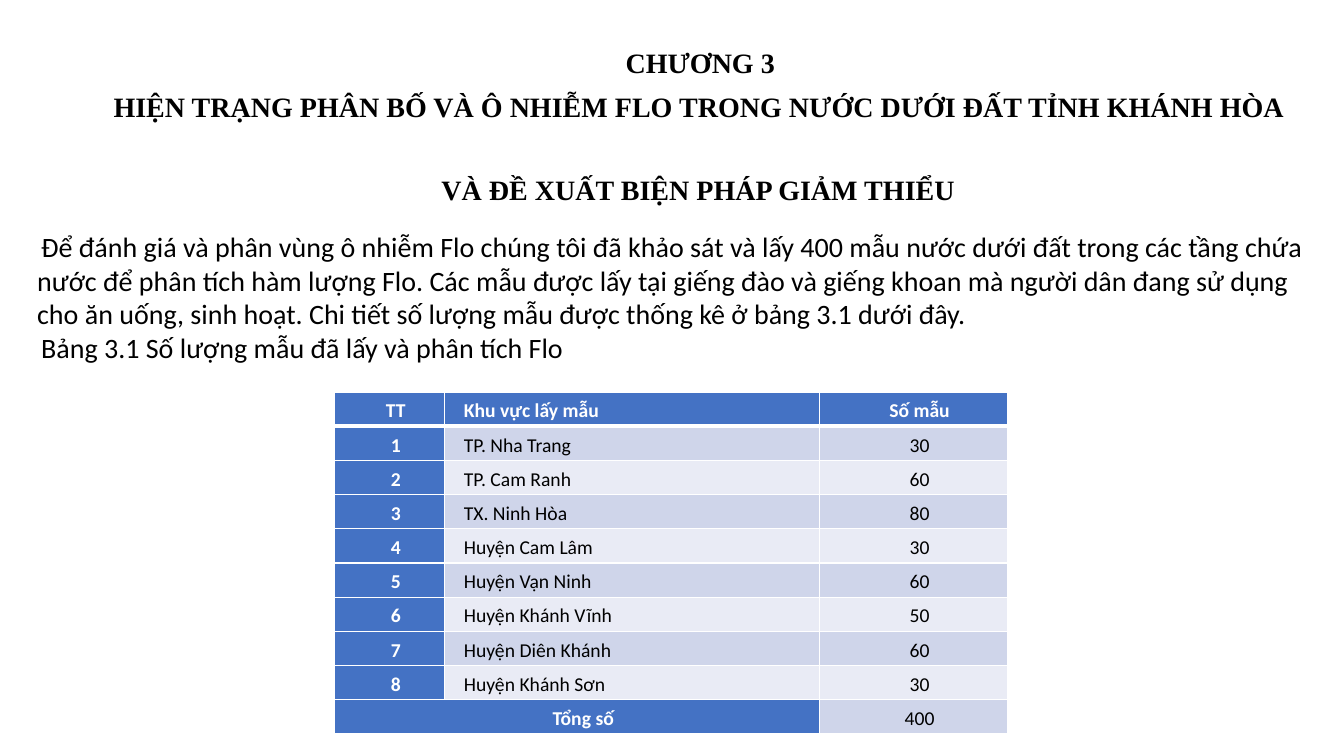
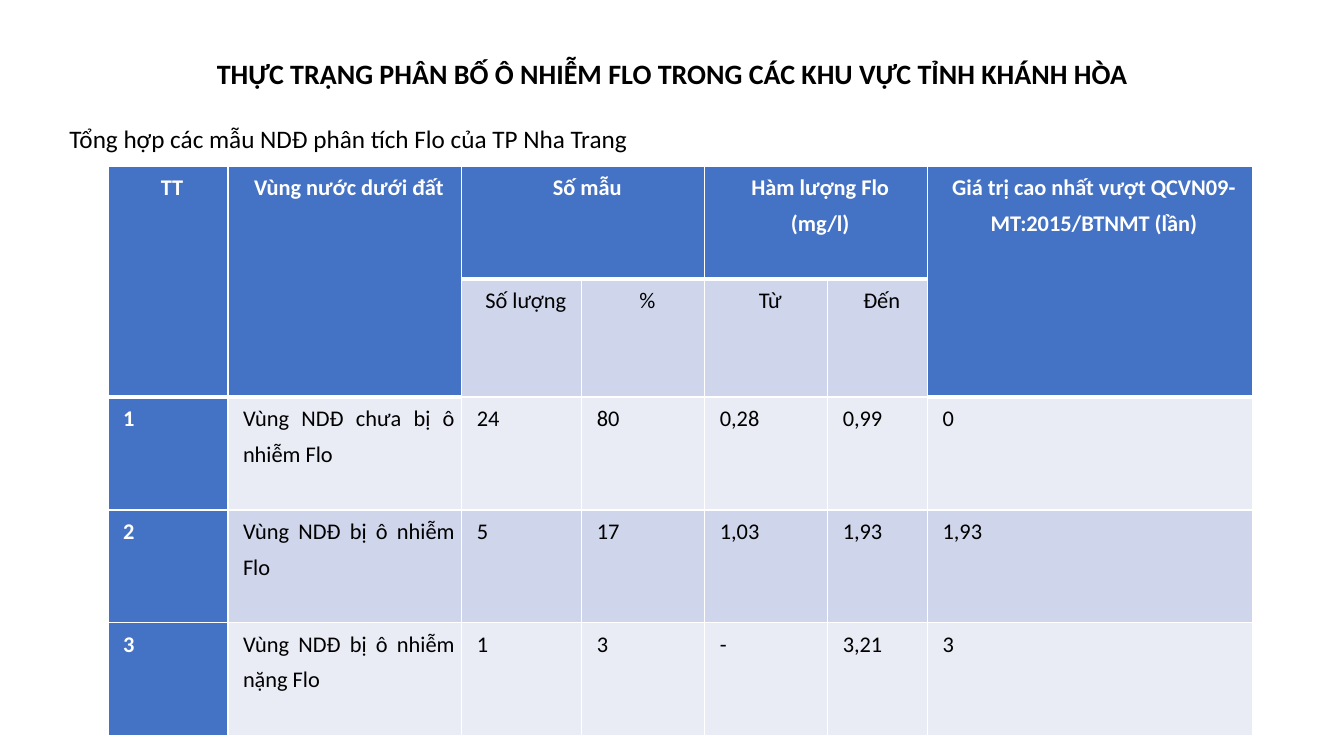
from lxml.etree import SubElement
from pptx import Presentation
from pptx.dml.color import RGBColor
from pptx.enum.text import MSO_ANCHOR, MSO_AUTO_SIZE, PP_ALIGN
from pptx.oxml.ns import qn
from pptx.util import Inches, Pt

# Shared look
WIDE, HIGH = Inches(13.33), Inches(7.5)
BLUE, DARK, PALE = "4472C4", "CFD5EA", "E9EBF5"
WHITE, BLACK = "FFFFFF", "000000"
FONT, SERIF = "Calibri", "Times New Roman"
MID, JUST = PP_ALIGN.CENTER, PP_ALIGN.JUSTIFY


def color(code):
    return RGBColor.from_string(code)


# Lengths are percentages of the slide's width or height
def across(share):
    return round(WIDE * share / 100)


def down(share):
    return round(HIGH * share / 100)


def indent(para, left, first):
    props = para._p.get_or_add_pPr()
    props.set("marL", str(Inches(left)))
    props.set("indent", str(Inches(first)))


def add_run(para, text, size, tint=BLACK, bold=False, face=FONT):
    run = para.add_run()
    run.text = text
    run.font.size, run.font.bold, run.font.name = Pt(size), bold, face
    run.font.color.rgb = color(tint)


def add_box(slide, left, top, width, height, anchor):
    box = slide.shapes.add_textbox(across(left), down(top), across(width), down(height))
    frame = box.text_frame
    frame.word_wrap = True
    frame.vertical_anchor = anchor
    return frame


def add_title(slide, lines, width, height, space, face=FONT):
    frame = add_box(slide, 6.9, 5.33, width, height, MSO_ANCHOR.MIDDLE)
    para = frame.paragraphs[0]
    para.alignment, para.line_spacing = MID, space
    for num, line in enumerate(lines):
        if num:
            para.add_line_break()
        add_run(para, line, 20, bold=True, face=face)
    return para


def add_body(slide, texts, place, size, anchor):
    frame = add_box(slide, *place, anchor)
    frame.auto_size = MSO_AUTO_SIZE.SHAPE_TO_FIT_TEXT
    for num, text in enumerate(texts):
        para = frame.add_paragraph() if num else frame.paragraphs[0]
        indent(para, 0, 0.04)
        add_run(para, text, size)


# Table cells
def add_edge(cell, side, width):
    line = SubElement(cell._tc.get_or_add_tcPr(), qn("a:ln" + side), w=str(Pt(width)))
    fill = SubElement(line, qn("a:solidFill"))
    SubElement(fill, qn("a:srgbClr"), val=WHITE)


def fill_cell(cell, text, size, align, first, row, col):
    head = row == 0 or col == 0
    cell.margin_left = cell.margin_right = Inches(0.07)
    cell.margin_top = cell.margin_bottom = 0
    for side in "LRTB":
        if side != "T" or row == 0:
            add_edge(cell, side, 3 if side == "B" and row == 0 else 1)
    cell.fill.solid()
    cell.fill.fore_color.rgb = color(BLUE if head else DARK if row % 2 else PALE)
    para = cell.text_frame.paragraphs[0]
    para.alignment, para.line_spacing, para.space_after = align, 1.3, Pt(6)
    indent(para, 0.08, first)
    add_run(para, text, size, WHITE if head else BLACK, head)


def add_grid(slide, data, left, top, cols, rows, spans, size, first, align):
    shape = slide.shapes.add_table(len(rows), len(cols), across(left), down(top),
                                   across(sum(cols)), down(sum(rows)))
    table = shape.table
    table.first_row = table.horz_banding = False
    for col, width in zip(table.columns, cols):
        col.width = across(width)
    for row, height in zip(table.rows, rows):
        row.height = down(height)
    for row, col, last, end in spans:
        table.cell(row, col).merge(table.cell(last, end))
    for row, texts in enumerate(data):
        for col, text in enumerate(texts):
            cell = table.cell(row, col)
            if not cell.is_spanned:
                fill_cell(cell, text, size, align(row, col), first, row, col)


# Slide 1: sample counts
def add_counts(slide):
    para = add_title(slide, [
        "CHƯƠNG 3",
        "HIỆN TRẠNG PHÂN BỐ VÀ Ô NHIỄM FLO TRONG NƯỚC DƯỚI ĐẤT TỈNH KHÁNH HÒA ",
        "VÀ ĐỀ XUẤT BIỆN PHÁP GIẢM THIỂU"], 89.5, 21.33, 1.3, SERIF)
    para.space_after = Pt(2)
    indent(para, 0.08, 0.04)
    areas = [("TP. Nha Trang", 30), ("TP. Cam Ranh", 60), ("TX. Ninh Hòa", 80),
             ("Huyện Cam Lâm", 30), ("Huyện Vạn Ninh", 60), ("Huyện Khánh Vĩnh", 50),
             ("Huyện Diên Khánh", 60), ("Huyện Khánh Sơn", 30)]
    total = sum(count for _, count in areas)
    data = [("TT", "Khu vực lấy mẫu", "Số mẫu")]
    data += [(str(num), name, str(count)) for num, (name, count) in enumerate(areas, 1)]
    data += [("Tổng số", None, str(total))]
    add_grid(slide, data, 24.91, 51.87, [8.18, 27.91, 13.95], [4.52] * len(data),
             [(9, 0, 9, 1)], 14, 0.04, lambda row, col: JUST if col == 1 else MID)
    add_body(slide, [
        "Để đánh giá và phân vùng ô nhiễm Flo chúng tôi đã khảo sát và lấy 400 mẫu nước "
        "dưới đất trong các tầng chứa nước để phân tích hàm lượng Flo. Các mẫu được lấy tại "
        "giếng đào và giếng khoan mà người dân đang sử dụng cho ăn uống, sinh hoạt. Chi tiết "
        "số lượng mẫu được thống kê ở bảng 3.1 dưới đây.",
        "Bảng 3.1 Số lượng mẫu đã lấy và phân tích Flo"],
        (2.03, 29.6, 95.87, 19.33), 20, MSO_ANCHOR.MIDDLE)


# Slide 2: fluoride levels by zone
def add_levels(slide):
    add_title(slide, ["THỰC TRẠNG PHÂN BỐ Ô NHIỄM FLO TRONG CÁC KHU VỰC TỈNH KHÁNH HÒA"],
              86.27, 9.2, 0.9)
    data = [
        ("TT", "Vùng nước dưới đất", "Số mẫu", None, "Hàm lượng Flo (mg/l)", None,
         "Giá trị cao nhất vượt QCVN09-MT:2015/BTNMT (lần)"),
        (None, None, "Số lượng", "%", "Từ", "Đến", None),
        ("1", "Vùng NDĐ chưa bị ô nhiễm Flo", "24", "80", "0,28", "0,99", "0"),
        ("2", "Vùng NDĐ bị ô nhiễm Flo", "5", "17", "1,03", "1,93", "1,93"),
        ("3", "Vùng NDĐ bị ô nhiễm nặng Flo", "1", "3", "-", "3,21", "3")]
    spans = [(0, col, 1, col) for col in (0, 1, 6)]
    spans += [(0, col, 0, col + 1) for col in (2, 4)]
    add_grid(slide, data, 8.03, 22, [8.93, 17.4, 8.93, 9.15, 9.15, 7.43, 24.16],
             [14.93, 15.6] + [14.93] * 3, spans, 16, 0,
             lambda row, col: JUST if row > 1 else MID)
    add_body(slide, ["Tổng hợp các mẫu NDĐ phân tích Flo của TP Nha Trang"],
             (4.13, 15.6, 50.04, 5.33), 18, MSO_ANCHOR.TOP)


def main():
    deck = Presentation()
    deck.slide_width, deck.slide_height = WIDE, HIGH
    for build in (add_counts, add_levels):
        build(deck.slides.add_slide(deck.slide_layouts[6]))
    deck.save("out.pptx")


if __name__ == "__main__":
    main()
